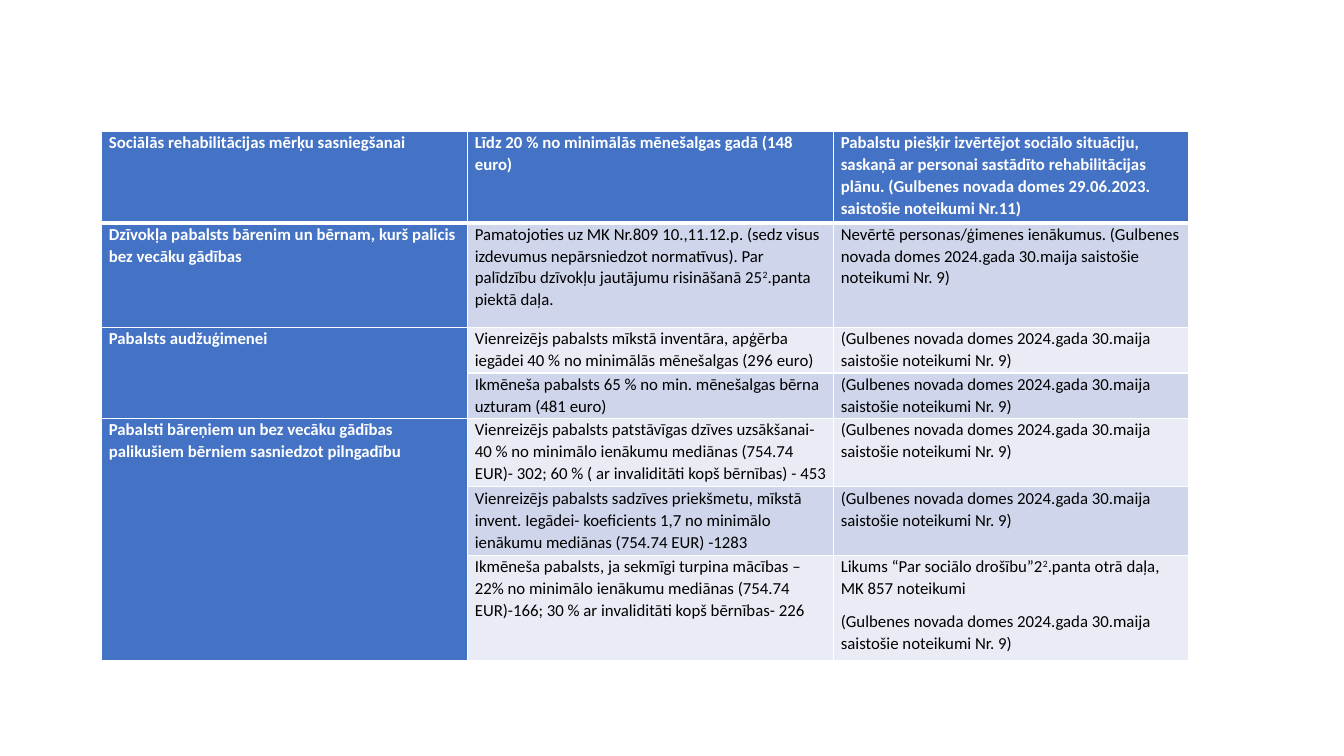
from lxml.etree import SubElement
from pptx import Presentation
from pptx.dml.color import RGBColor
from pptx.oxml.ns import qn
from pptx.util import Inches, Pt

COLORS = {"blue": "4472C4", "band": "CFD5EA", "light": "E9EBF5",
          "white": "FFFFFF", "black": "000000"}
COL_WIDTHS = [3.63, 3.63, 3.52]
ROW_HEIGHTS = [0.91, 1.04, 0.45, 0.45, 0.68, 0.68, 1.04]
FIRST_COLUMN_SPANS = [(2, 3), (4, 6)]
RULES = "(Gulbenes novada domes 2024.gada 30.maija saistošie noteikumi Nr. 9)"

# Each cell is a list of paragraphs; "^" switches superscript on and off.
ROWS = [
    [["Sociālās rehabilitācijas mērķu sasniegšanai"],
     ["Līdz 20 % no minimālās mēnešalgas gadā (148 euro)"],
     ["Pabalstu piešķir izvērtējot sociālo situāciju, saskaņā ar personai sastādīto "
      "rehabilitācijas plānu. (Gulbenes novada domes 29.06.2023. saistošie noteikumi Nr.11)"]],
    [["Dzīvokļa pabalsts bārenim un bērnam, kurš palicis bez vecāku gādības"],
     ["Pamatojoties uz MK Nr.809 10.,11.12.p. (sedz visus izdevumus nepārsniedzot "
      "normatīvus). Par palīdzību dzīvokļu jautājumu risināšanā 25^2^.panta piektā daļa."],
     ["Nevērtē personas/ģimenes ienākumus. " + RULES]],
    [["Pabalsts audžuģimenei"],
     ["Vienreizējs pabalsts mīkstā inventāra, apģērba iegādei 40 % no minimālās "
      "mēnešalgas (296 euro)"],
     [RULES]],
    [[],
     ["Ikmēneša pabalsts 65 % no min. mēnešalgas bērna uzturam (481 euro)"],
     [RULES]],
    [["Pabalsti bāreņiem un bez vecāku gādības palikušiem bērniem sasniedzot pilngadību"],
     ["Vienreizējs pabalsts patstāvīgas dzīves uzsākšanai- 40 % no minimālo ienākumu "
      "mediānas (754.74 EUR)- 302; 60 % ( ar invaliditāti kopš bērnības) - 453"],
     [RULES]],
    [[],
     ["Vienreizējs pabalsts sadzīves priekšmetu, mīkstā invent. Iegādei- koeficients 1,7 "
      "no minimālo ienākumu mediānas (754.74 EUR) -1283"],
     [RULES]],
    [[],
     ["Ikmēneša pabalsts, ja sekmīgi turpina mācības – 22% no minimālo ienākumu mediānas "
      "(754.74 EUR)-166; 30 % ar invaliditāti kopš bērnības- 226"],
     ["Likums “Par sociālo drošību”2^2^.panta otrā daļa, MK 857 noteikumi", RULES]],
]


def rgb(name):
    return RGBColor.from_string(COLORS[name])


def set_borders(cell, top, bottom):
    tc_pr = cell._tc.get_or_add_tcPr()
    for side, width in (("L", 1), ("R", 1), ("T", top), ("B", bottom)):
        ln = SubElement(tc_pr, qn(f"a:ln{side}"), w=str(Pt(width)))
        fill = SubElement(ln, qn("a:solidFill"))
        SubElement(fill, qn("a:srgbClr"), val=COLORS["white"])


def add_runs(p, text, color, bold):
    for i, part in enumerate(text.split("^")):
        r = p.add_run()
        r.text = part
        r.font.name = "Calibri"
        r.font.size = Pt(12)
        r.font.bold = bold
        r.font.color.rgb = rgb(color)
        if i % 2:
            r._r.get_or_add_rPr().set("baseline", "30000")


def write_cell(cell, paragraphs, color, bold):
    cell.margin_left = cell.margin_right = Inches(0.07)
    cell.margin_top = cell.margin_bottom = 0
    tf = cell.text_frame
    for i, text in enumerate(paragraphs):
        p = tf.add_paragraph() if i else tf.paragraphs[0]
        p.line_spacing = 1.07
        p.space_after = Pt(8)
        add_runs(p, text, color, bold)


def add_benefits_table(s):
    frame = s.shapes.add_table(len(ROWS), len(COL_WIDTHS), Inches(1.01), Inches(1.3),
                               Inches(sum(COL_WIDTHS)), Inches(sum(ROW_HEIGHTS)))
    table = frame.table
    table.first_col = True
    for column, width in zip(table.columns, COL_WIDTHS):
        column.width = Inches(width)
    for row, height in zip(table.rows, ROW_HEIGHTS):
        row.height = Inches(height)
    for first, last in FIRST_COLUMN_SPANS:
        table.cell(first, 0).merge(table.cell(last, 0))

    for i, row in enumerate(ROWS):
        for j, paragraphs in enumerate(row):
            cell = table.cell(i, j)
            heading = i == 0 or j == 0
            set_borders(cell, 3 if i == 1 else 1, 3 if i == 0 else 1)
            cell.fill.solid()
            cell.fill.fore_color.rgb = rgb("blue" if heading else "band" if i % 2 else "light")
            write_cell(cell, paragraphs, "white" if heading else "black", heading)


def main():
    prs = Presentation()
    prs.slide_width = Inches(13.33)
    prs.slide_height = Inches(7.5)
    s = prs.slides.add_slide(prs.slide_layouts[6])
    add_benefits_table(s)
    prs.save("out.pptx")


if __name__ == "__main__":
    main()
